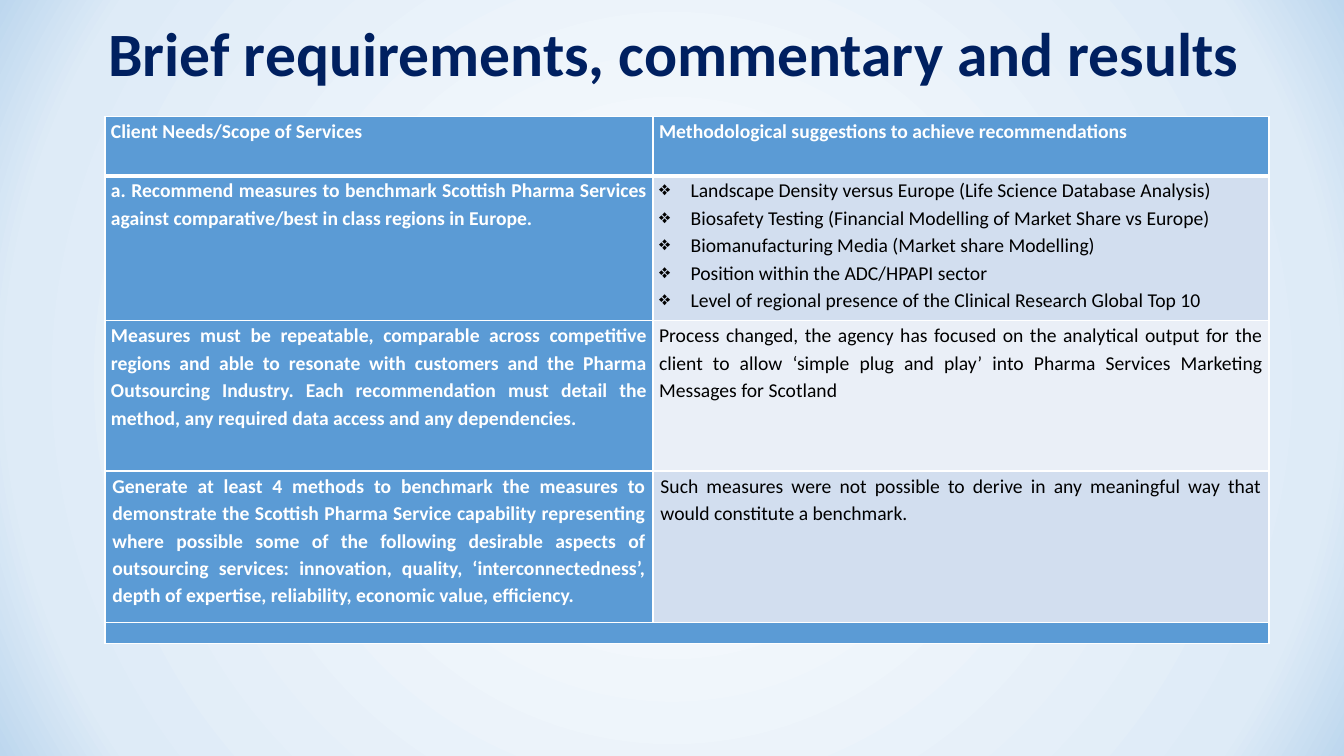
"""Build the slide of brief requirements, commentary and results."""
import pptx
import pptx.util
import pptx.dml.color
import pptx.enum.text
import pptx.oxml
import pptx.oxml.ns
from lxml import etree

Pt = pptx.util.Pt
RGB = pptx.dml.color.RGBColor.from_string
ALIGN = pptx.enum.text.PP_ALIGN
qn = pptx.oxml.ns.qn

TITLE = "Brief requirements, commentary and results"
ROWS = [
    (["Client Needs/Scope of Services"],
     ["Methodological suggestions to achieve recommendations"]),
    (["a. Recommend measures to benchmark Scottish Pharma Services against "
      "comparative/best in class regions in Europe."],
     ["Landscape Density versus Europe (Life Science Database Analysis)",
      "Biosafety Testing (Financial Modelling of Market Share vs Europe)",
      "Biomanufacturing Media (Market share Modelling)",
      "Position within the ADC/HPAPI sector",
      "Level of regional presence of the Clinical Research Global Top 10"]),
    (["Measures must be repeatable, comparable across competitive regions and able to "
      "resonate with customers and the Pharma Outsourcing Industry. Each recommendation "
      "must detail the method, any required data access and any dependencies."],
     ["Process changed, the agency has focused on the analytical output for the client to "
      "allow ‘simple plug and play’ into Pharma Services Marketing Messages for Scotland"]),
    (["Generate at least 4 methods to benchmark the measures to demonstrate the Scottish "
      "Pharma Service capability representing where possible some of the following "
      "desirable aspects of outsourcing services: innovation, quality, "
      "‘interconnectedness’, depth of expertise, reliability, economic value, efficiency."],
     ["Such measures were not possible to derive in any meaningful way that would "
      "constitute a benchmark."]),
    ([], []),
]
COLORS = {"title": "002060", "head": "5B9BD5", "odd": "D2DEEF", "even": "EAEFF7",
          "white": "FFFFFF", "black": "000000"}
GLOW = [(20, "F7FAFD"), (86, "DEEBF7"), (100, "BDD7EE")]
FONT = "Calibri"
TITLE_BOX = (33.84, 12.96, 895.68, 55.44)
TABLE_AT = (75, 83)
COL_WIDTHS = [391.5, 440]
ROW_HEIGHTS = [42.5, 103.5, 107.5, 108, 15]
INSETS = [4.3, 4.3, 4.3, 5.3, 4.3]
BULLET_INDENT = 22.5


def set_attrs(obj, values):
    """Set each named attribute of an object."""
    for name, value in values.items():
        setattr(obj, name, value)


def xml(tag, body="", **attrs):
    """Make a drawing element."""
    listed = "".join(f' {k}="{v}"' for k, v in attrs.items())
    return pptx.oxml.parse_xml(
        f'<a:{tag} xmlns:a="http://schemas.openxmlformats.org/drawingml/2006/main"'
        f'{listed}>{body}</a:{tag}>')


def paint_background(s):
    """Give the slide a round glow."""
    s.background.fill.gradient()
    old = s.element.find(".//" + qn("a:gradFill"))
    stops = "".join(f'<a:gs pos="{pos * 1000}"><a:srgbClr val="{c}"/></a:gs>'
                    for pos, c in GLOW)
    body = (f'<a:gsLst>{stops}</a:gsLst><a:path path="circle">'
            '<a:fillToRect l="50000" t="50000" r="50000" b="50000"/></a:path>')
    old.getparent().replace(old, xml("gradFill", body, rotWithShape=1))


def write(p, text, size, color, bold, align, spacing):
    """Put one formatted run in a paragraph."""
    set_attrs(p, {"alignment": align, "line_spacing": spacing})
    r = p.add_run()
    r.text = text
    set_attrs(r.font, {"name": FONT, "size": Pt(size), "bold": bold})
    r.font.color.rgb = RGB(color)


def add_title(s):
    """Add the heading."""
    tf = s.shapes.add_textbox(*map(Pt, TITLE_BOX)).text_frame
    set_attrs(tf, {"word_wrap": True,
                   "vertical_anchor": pptx.enum.text.MSO_ANCHOR.MIDDLE})
    write(tf.paragraphs[0], TITLE, 44, COLORS["title"], True, ALIGN.CENTER, 0.9)


def fill_cell(cell, lines, row, col):
    """Write, fill and border one cell."""
    is_head = row in (0, len(ROWS) - 1) or col == 0
    fill = "head" if is_head else "odd" if row % 2 else "even"
    cell.fill.solid()
    cell.fill.fore_color.rgb = RGB(COLORS[fill])
    inset = Pt(INSETS[row])
    set_attrs(cell, {"margin_left": inset, "margin_right": inset,
                     "margin_top": 0, "margin_bottom": 0})
    tf = cell.text_frame
    for i, line in enumerate(lines):
        p = tf.add_paragraph() if i else tf.paragraphs[0]
        if len(lines) > 1:
            pPr = p._p.get_or_add_pPr()
            pPr.set("marL", str(Pt(BULLET_INDENT)))
            pPr.set("indent", str(-Pt(BULLET_INDENT)))
            pPr.append(xml("buChar", char="❖"))
        color = COLORS["white" if is_head else "black"]
        write(p, line, 14, color, is_head, ALIGN.JUSTIFY, 1.15)
    if not lines:
        tf.paragraphs[0]._p.append(xml("endParaRPr", sz=1000))
    line_fill = f'<a:solidFill><a:srgbClr val="{COLORS["white"]}"/></a:solidFill>'
    thick = {("lnB", 0): 3, ("lnT", 1): 3}
    for i, side in enumerate(("lnL", "lnR", "lnT", "lnB")):
        width = Pt(thick.get((side, row), 1))
        cell._tc.get_or_add_tcPr().insert(i, xml(side, line_fill, w=width))


def add_requirements(s):
    """Add the table of requirements and suggestions."""
    size = (sum(COL_WIDTHS), sum(ROW_HEIGHTS))
    table = s.shapes.add_table(len(ROWS), len(COL_WIDTHS),
                               *map(Pt, TABLE_AT + size)).table
    for column, width in zip(table.columns, COL_WIDTHS):
        column.width = Pt(width)
    for row, height in zip(table.rows, ROW_HEIGHTS):
        row.height = Pt(height)
    for i, cells in enumerate(ROWS):
        for j, lines in enumerate(cells):
            fill_cell(table.cell(i, j), lines, i, j)
    last = len(ROWS) - 1
    table.cell(last, 0).merge(table.cell(last, 1))


def main():
    """Build and save the slide."""
    prs = pptx.Presentation()
    set_attrs(prs, {"slide_width": Pt(960), "slide_height": Pt(540)})
    s = prs.slides.add_slide(prs.slide_layouts[6])
    paint_background(s)
    add_title(s)
    add_requirements(s)
    prs.save("out.pptx")


if __name__ == "__main__":
    main()
